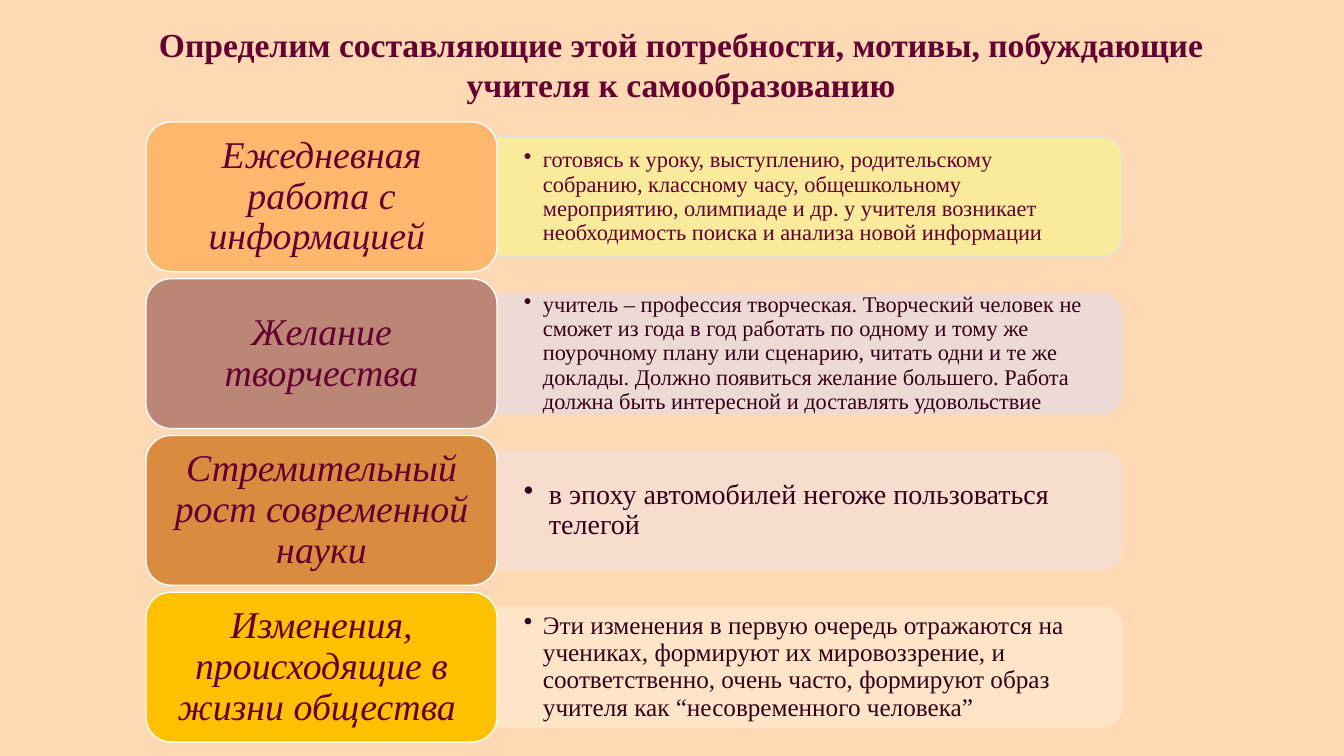
from dataclasses import dataclass

import pptx
import pptx.dml.color
import pptx.enum.shapes
import pptx.enum.text
import pptx.oxml
import pptx.oxml.ns
import pptx.util

SHAPE = pptx.enum.shapes.MSO_SHAPE
ALIGN = pptx.enum.text.PP_ALIGN
ANCHOR = pptx.enum.text.MSO_ANCHOR


@dataclass(frozen=True)
class Theme:
    font: str = "Times New Roman"
    background: str = "FFD9B3"
    wine: str = "640032"
    dark: str = "36001B"
    card_line: str = "FFFFFF"
    title_size: int = 24
    card_size: int = 27


THEME = Theme()

MOTIVES = [
    dict(name="Ежедневная работа с информацией ",
         detail="готовясь к уроку, выступлению, родительскому собранию, классному часу, "
                "общешкольному мероприятию, олимпиаде и др. у учителя возникает "
                "необходимость поиска и анализа новой информации",
         card="FFB66D", panel="F9EE99", edge="E1E1E1", ink=THEME.wine, size=16, indent=19),
    dict(name="Желание творчества",
         detail="учитель – профессия творческая. Творческий человек не сможет из года в год "
                "работать по одному и тому же поурочному плану или сценарию, читать одни и те "
                "же доклады. Должно появиться желание большего. Работа должна быть интересной "
                "и доставлять удовольствие",
         card="BB8676", panel="ECDBD9", edge="ECDBD9", ink=THEME.dark, size=16, indent=19),
    dict(name="Стремительный рост современной науки",
         detail="в эпоху автомобилей негоже пользоваться телегой",
         card="D98C3F", panel="F6DED1", edge="F6DED1", ink=THEME.dark, size=20, indent=25),
    dict(name="Изменения, происходящие в жизни общества ",
         detail="Эти изменения в первую очередь отражаются на учениках, формируют их "
                "мировоззрение, и соответственно, очень часто, формируют образ учителя как "
                "“несовременного человека”",
         card="FFC000", panel="FFE7CB", edge="FFE7CB", ink=THEME.dark, size=18, indent=19),
]


def px(n):
    return pptx.util.Emu(round(n * 914400 / 100.8))


def rgb(value):
    return pptx.dml.color.RGBColor.from_string(value)


def add_box(s, kind, box, fill, line):
    sp = s.shapes.add_shape(kind, *map(px, box))
    sp.shadow.inherit = False
    sp.fill.solid()
    sp.fill.fore_color.rgb = rgb(fill)
    sp.line.color.rgb = rgb(line)
    sp.line.width = pptx.util.Pt(1)
    return sp


def set_alpha(sp, percent):
    for color in sp.element.spPr.iter(pptx.oxml.ns.qn("a:srgbClr")):
        alpha = pptx.oxml.parse_xml(
            f'<a:alpha {pptx.oxml.ns.nsdecls("a")} val="{percent * 1000}"/>')
        color.append(alpha)


def write(sp, text, size, color, inset, align=ALIGN.CENTER, anchor=ANCHOR.MIDDLE,
          spacing=0.9, bold=False, italic=False):
    tf = sp.text_frame
    tf.word_wrap = True
    tf.vertical_anchor = anchor
    tf.margin_left = tf.margin_right = px(inset[0])
    tf.margin_top = tf.margin_bottom = px(inset[1])
    p = tf.paragraphs[0]
    p.alignment = align
    p.line_spacing = spacing
    r = p.add_run()
    r.text = text
    r.font.name = THEME.font
    r.font.size = pptx.util.Pt(size)
    r.font.color.rgb = rgb(color)
    r.font.bold = bold
    r.font.italic = italic
    return p


def add_bullet(p, indent):
    pPr = p._p.get_or_add_pPr()
    pPr.set("marL", str(px(indent)))
    pPr.set("indent", str(-px(indent)))
    pPr.append(pptx.oxml.parse_xml(
        f'<a:buChar {pptx.oxml.ns.nsdecls("a")} char="•"/>'))


def add_title(s, box):
    sp = s.shapes.add_textbox(*map(px, box))
    write(sp, "Определим составляющие этой потребности, мотивы, побуждающие "
              "учителя к самообразованию",
          THEME.title_size, THEME.wine, (10, 5), anchor=ANCHOR.TOP, spacing=1.0, bold=True)


def add_motive(s, box, motive):
    left, top, width, height = box
    card_width = 351
    panel_left, panel_width, panel_height = left + card_width, width - card_width, 120
    middle = top + height / 2

    panel_box = (panel_left + (panel_width - panel_height) / 2, middle - panel_width / 2,
                 panel_height, panel_width)
    panel = add_box(s, SHAPE.ROUND_2_SAME_RECTANGLE, panel_box, motive["panel"], motive["edge"])
    panel.rotation = 90
    set_alpha(panel, 90)

    detail_height = 108
    detail = s.shapes.add_textbox(*map(px, (panel_left, middle - detail_height / 2,
                                            panel_width - 6, detail_height)))
    p = write(detail, motive["detail"], motive["size"], motive["ink"], (27, 14),
              align=ALIGN.LEFT)
    add_bullet(p, motive["indent"])

    card = add_box(s, SHAPE.ROUNDED_RECTANGLE, (left, top, card_width, height),
                   motive["card"], THEME.card_line)
    write(card, motive["name"], THEME.card_size, THEME.wine, (11, 6), italic=True)


def add_motives(s, box):
    left, top, width, height = box
    gap = 7
    row = (height - gap * (len(MOTIVES) - 1)) / len(MOTIVES)
    for i, motive in enumerate(MOTIVES):
        add_motive(s, (left, top + i * (row + gap), width, row), motive)


def main():
    prs = pptx.Presentation()
    prs.slide_width, prs.slide_height = px(1344), px(756)
    s = prs.slides.add_slide(prs.slide_layouts[6])
    s.background.fill.solid()
    s.background.fill.fore_color.rgb = rgb(THEME.background)
    add_title(s, (89, 19, 1184, 92))
    add_motives(s, (146, 122, 976, 620))
    prs.save("out.pptx")


if __name__ == "__main__":
    main()
